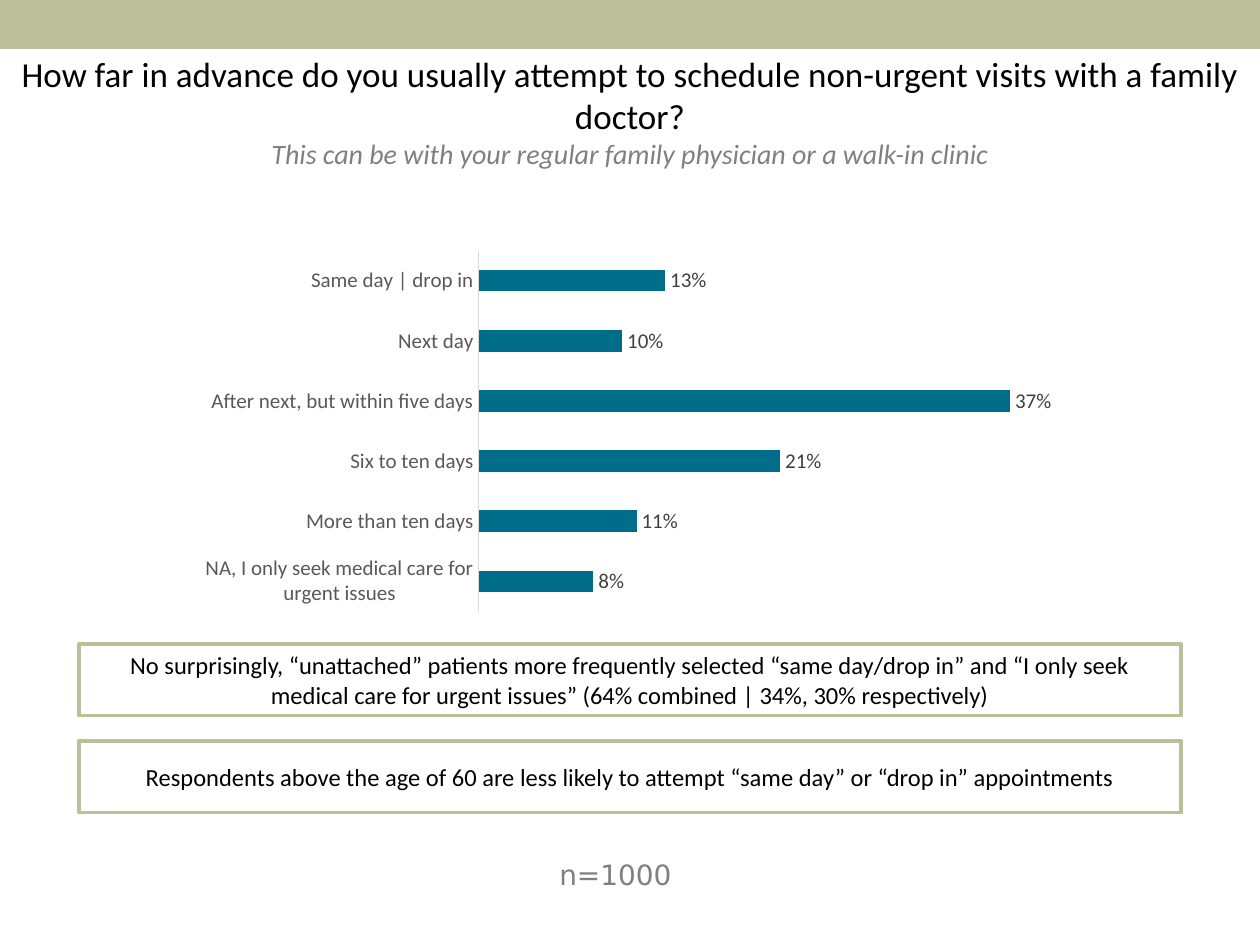
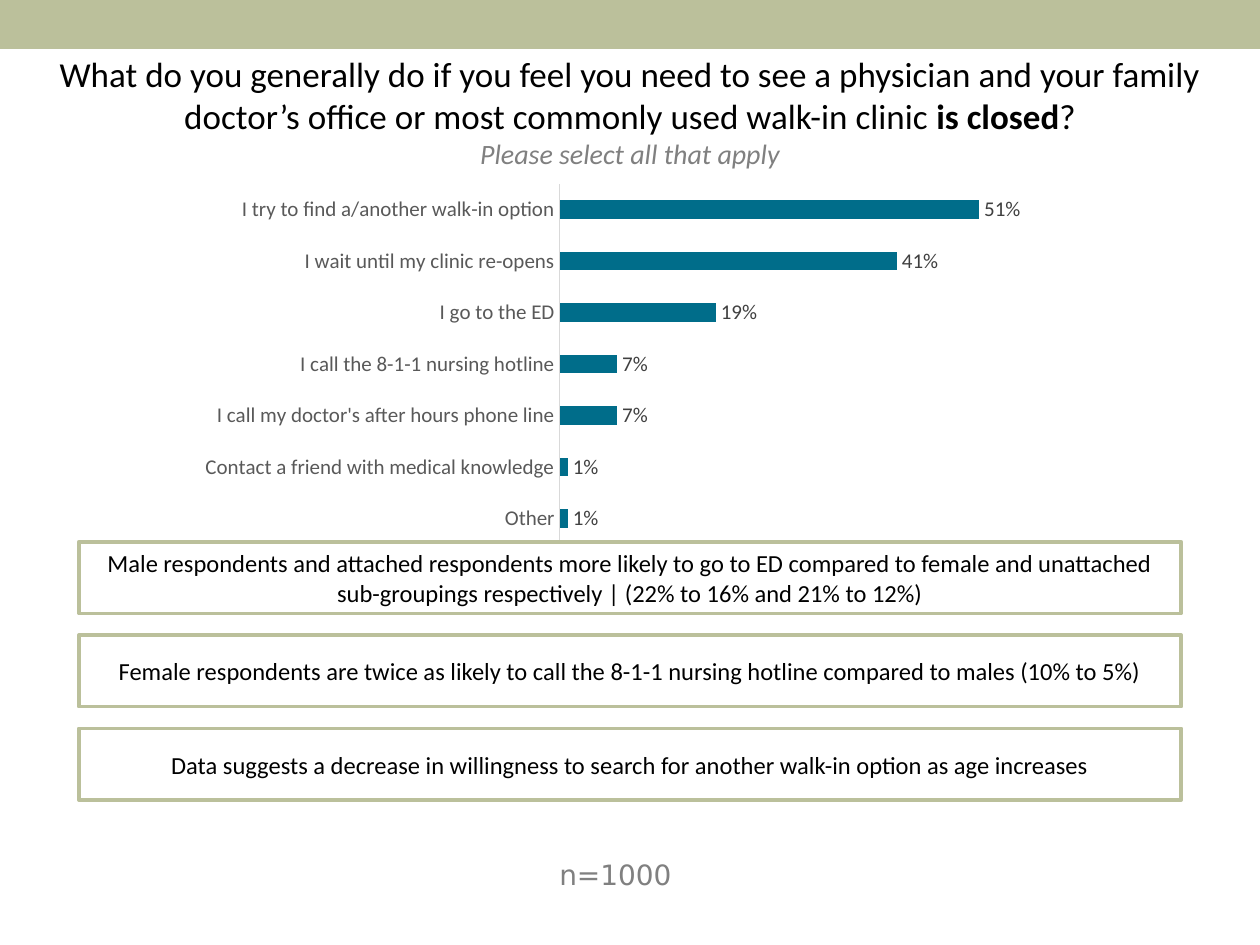
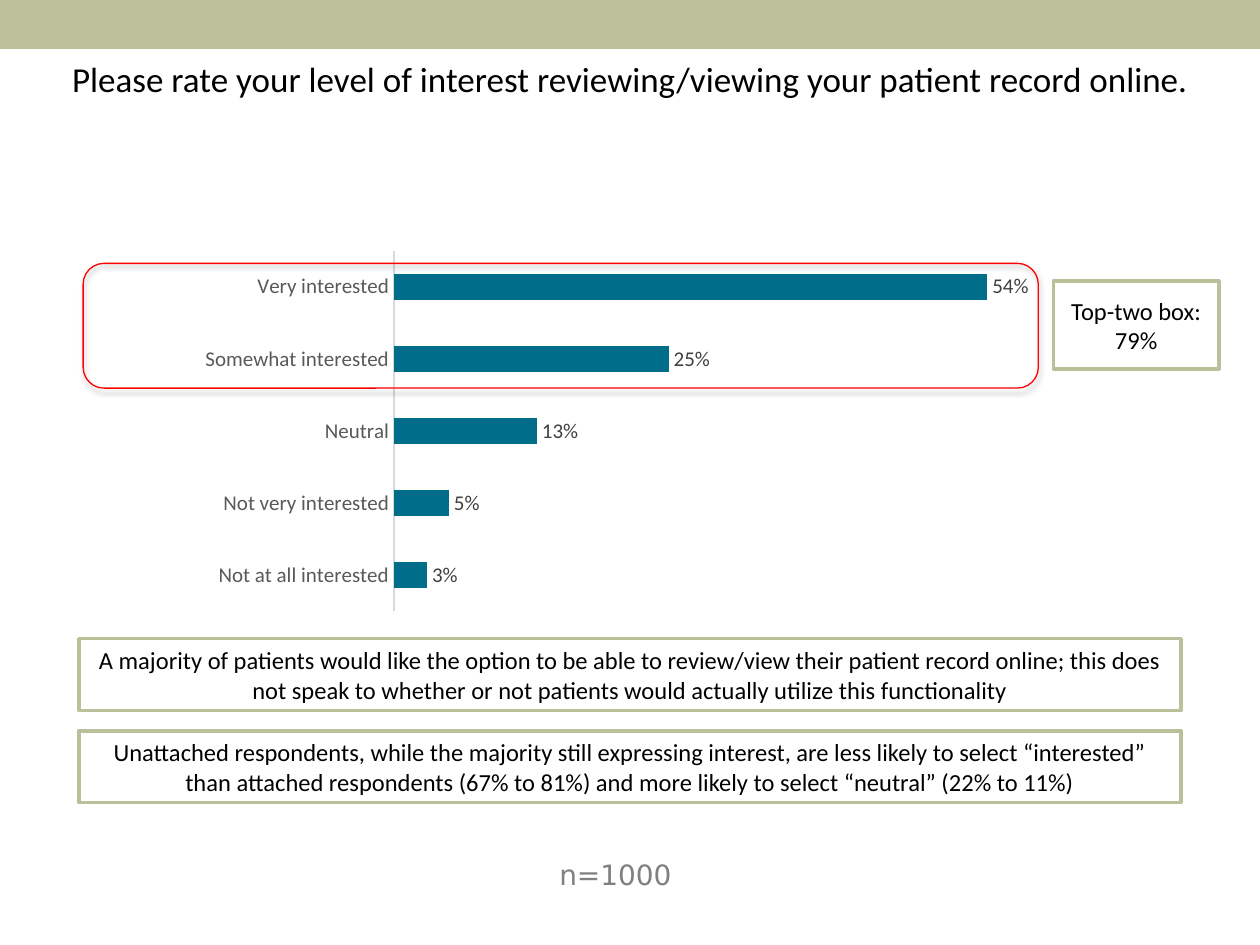
"""Build three survey slides, each with a bar chart and its key findings."""
from lxml.etree import SubElement
from pptx import Presentation
from pptx.chart.data import CategoryChartData
from pptx.dml.color import RGBColor
from pptx.enum.chart import XL_CHART_TYPE, XL_LABEL_POSITION, XL_TICK_LABEL_POSITION, XL_TICK_MARK
from pptx.enum.shapes import MSO_SHAPE
from pptx.enum.text import MSO_ANCHOR, PP_ALIGN
from pptx.oxml.ns import qn
from pptx.util import Pt

SAGE = RGBColor(0xBB, 0xC0, 0x9B)
TEAL = RGBColor(0x00, 0x6D, 0x8A)
BLACK = RGBColor(0x00, 0x00, 0x00)
WHITE = RGBColor(0xFF, 0xFF, 0xFF)
GRAY = RGBColor(0x80, 0x80, 0x80)
RED = RGBColor(0xFF, 0x00, 0x00)
DARK = RGBColor(0x40, 0x40, 0x40)
SLATE = RGBColor(0x59, 0x59, 0x59)
RULE = RGBColor(0xD9, 0xD9, 0xD9)
FONT = "Calibri"
WIDE = 720

PAGES = [
    {
        "title": ["How far in advance do you usually attempt to schedule non-urgent visits with a family doctor?"],
        "top": 26.6,
        "hint": "This can be with your regular family physician or a walk-in clinic",
        "chart": 139,
        "bars": {
            "Same day | drop in": 0.13,
            "Next day": 0.1,
            "After next, but within five days": 0.37,
            "Six to ten days": 0.21,
            "More than ten days": 0.11,
            "NA, I only seek medical care for urgent issues": 0.08,
        },
        "first": 368,
        "step": 55.4,
        "notes": [
            "No surprisingly, “unattached” patients more frequently selected “same day/drop in” and "
            "“I only seek medical care for urgent issues” (64% combined | 34%, 30% respectively)",
            "Respondents above the age of 60 are less likely to attempt “same day” or “drop in” appointments",
        ],
    },
    {
        "title": [
            "What do you generally do if you feel you need to see a physician and your family "
            "doctor’s office or most commonly used walk-in clinic ",
            "is closed",
            "?",
        ],
        "top": 26.6,
        "hint": "Please select all that apply",
        "chart": 100.8,
        "bars": {
            "I try to find a/another walk-in option": 0.51,
            "I wait until my clinic re-opens": 0.41,
            "I go to the ED": 0.19,
            "I call the 8-1-1 nursing hotline": 0.07,
            "I call my doctor's after hours phone line": 0.07,
            "Contact a friend with medical knowledge": 0.01,
            "Other": 0.01,
        },
        "first": 309.6,
        "step": 53.3,
        "notes": [
            "Male respondents and attached respondents more likely to go to ED compared to female and "
            "unattached sub-groupings respectively | (22% to 16% and 21% to 12%)",
            "Female respondents are twice as likely to call the 8-1-1 nursing hotline compared to males (10% to 5%)",
            "Data suggests a decrease in willingness to search for another walk-in option as age increases",
        ],
    },
    {
        "title": ["Please rate your level of interest reviewing/viewing your patient record online."],
        "top": 29.5,
        "hint": None,
        "chart": 139,
        "bars": {
            "Very interested": 0.54,
            "Somewhat interested": 0.25,
            "Neutral": 0.13,
            "Not very interested": 0.05,
            "Not at all interested": 0.03,
        },
        "first": 365,
        "step": 52.6,
        "notes": [
            "A majority of patients would like the option to be able to review/view their patient record "
            "online; this does not speak to whether or not patients would actually utilize this functionality",
            "Unattached respondents, while the majority still expressing interest, are less likely to select "
            "“interested” than attached respondents (67% to 81%) and more likely to select “neutral” (22% to 11%)",
        ],
    },
]


def label(slide, box, parts, size, color, font=FONT, align=PP_ALIGN.CENTER):
    """Add a text box in which every second part is bold."""
    frame = slide.shapes.add_textbox(*map(Pt, box)).text_frame
    frame.word_wrap = True
    para = frame.paragraphs[0]
    para.alignment = align
    for index, part in enumerate(parts):
        run = para.add_run()
        run.text = part
        run.font.name, run.font.size = font, Pt(size)
        run.font.color.rgb = color
        run.font.bold = index % 2 == 1
    return para


def note(slide, box, text):
    """Add a white box with a sage border and centred text."""
    shape = slide.shapes.add_shape(MSO_SHAPE.RECTANGLE, *map(Pt, box))
    shape.shadow.inherit = False
    shape.fill.solid()
    shape.fill.fore_color.rgb = WHITE
    shape.line.color.rgb = SAGE
    shape.line.width = Pt(2)
    frame = shape.text_frame
    frame.text = text
    frame.word_wrap = True
    frame.vertical_anchor = MSO_ANCHOR.MIDDLE
    para = frame.paragraphs[0]
    para.alignment = PP_ALIGN.CENTER
    font = para.runs[0].font
    font.name, font.size = FONT, Pt(14)
    font.color.rgb = BLACK


deck = Presentation()
deck.slide_width, deck.slide_height = Pt(WIDE), Pt(540)
blank = deck.slide_layouts[6]

for page in PAGES:
    slide = deck.slides.add_slide(blank)
    band = slide.shapes.add_shape(MSO_SHAPE.RECTANGLE, 0, 0, Pt(WIDE), Pt(28))
    band.shadow.inherit = False
    band.fill.solid()
    band.fill.fore_color.rgb = SAGE
    band.line.fill.background()

    label(slide, (312.5, 486.7, 95, 25), ["n=1000"], 16, GRAY, "DejaVu Sans", PP_ALIGN.LEFT)
    label(slide, (0, page["top"], WIDE, 32.4), page["title"], 20, BLACK)

    data = CategoryChartData(number_format="0%")
    data.categories = list(page["bars"])
    data.add_series("Series 1", list(page["bars"].values()))
    chart = slide.shapes.add_chart(
        XL_CHART_TYPE.BAR_CLUSTERED, Pt(107.3), Pt(page["chart"]), Pt(504.7), Pt(214.6), data
    ).chart
    chart.has_legend = chart.has_title = False
    chart.font.name, chart.font.size = FONT, Pt(10)
    chart.font.color.rgb = BLACK

    axis = chart.category_axis
    axis.reverse_order = True
    axis.major_tick_mark = axis.minor_tick_mark = XL_TICK_MARK.NONE
    axis.tick_label_position = XL_TICK_LABEL_POSITION.NEXT_TO_AXIS
    axis.format.line.color.rgb = RULE
    axis.format.line.width = Pt(0.75)
    font = axis.tick_labels.font
    font.name, font.size = FONT, Pt(12)
    font.color.rgb = SLATE
    scale = chart.value_axis
    scale.has_major_gridlines = False
    scale.minimum_scale = 0
    scale.visible = False

    plot = chart.plots[0]
    plot.gap_width = 182
    plot.vary_by_categories = False
    fill = plot.series[0].format.fill
    fill.solid()
    fill.fore_color.rgb = TEAL
    plot.has_data_labels = True
    tags = plot.data_labels
    tags.show_value = True
    tags.number_format, tags.number_format_is_linked = "0%", False
    tags.position = XL_LABEL_POSITION.OUTSIDE_END
    tags.font.name, tags.font.size = FONT, Pt(12)
    tags.font.color.rgb = DARK

    if page["hint"]:
        hint = label(slide, (0, 74.2, WIDE, 32.4), [page["hint"]], 16, GRAY)
        hint.runs[0].font.italic = True
    for index, text in enumerate(page["notes"]):
        note(slide, (45, page["first"] + index * page["step"], 630, 41), text)

ring = slide.shapes.add_shape(MSO_SHAPE.ROUNDED_RECTANGLE, Pt(47.5), Pt(150.5), Pt(545.8), Pt(71.3))
ring.fill.background()
ring.line.color.rgb = RED
ring.line.width = Pt(0.75)
ring.shadow.inherit = False
glow = ring.element.spPr.find(qn("a:effectLst"))
shade = SubElement(
    glow, qn("a:outerShdw"), blurRad=str(Pt(3.1)), dist=str(Pt(1.8)), dir="5400000", rotWithShape="0"
)
tint = SubElement(shade, qn("a:srgbClr"), val="000000")
SubElement(tint, qn("a:alpha"), val="35000")
note(slide, (602, 160.5, 94.5, 50.4), "Top-two box: 79%")

deck.save("out.pptx")
